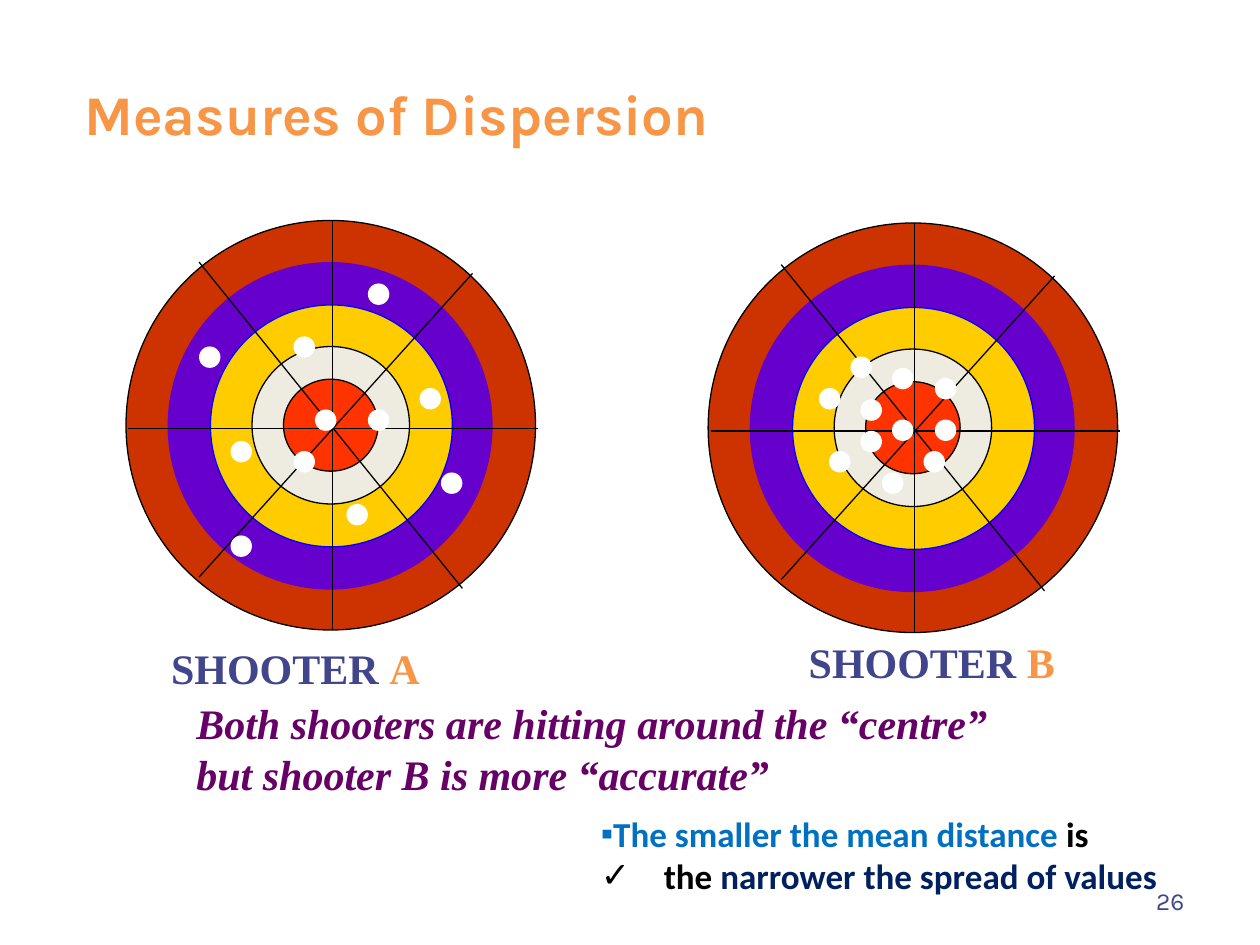
import dataclasses
import typing

import lxml.etree
import pptx
import pptx.dml.color
import pptx.enum.shapes
import pptx.enum.text
import pptx.oxml.ns
import pptx.util

Inches = pptx.util.Inches
Pt = pptx.util.Pt
ALIGN = pptx.enum.text.PP_ALIGN
ANCHOR = pptx.enum.text.MSO_ANCHOR
FIT = pptx.enum.text.MSO_AUTO_SIZE

HUES = {
    "rust": "CC3300", "violet": "6600CC", "gold": "FFCC00", "cream": "EEECE1",
    "red": "FF3300", "white": "FFFFFF", "black": "000000", "blue": "0000FF",
    "slate": "40458C", "orange": "F79646", "plum": "660066",
    "sky": "0070C0", "navy": "002060",
}
DOT = 0.17


@dataclasses.dataclass
class Ring:
    left: float
    top: float
    width: float
    height: float
    fill: str
    line: typing.Optional[str] = None


@dataclasses.dataclass
class Spoke:
    start: tuple
    end: tuple


@dataclasses.dataclass
class Target:
    left: float
    top: float
    shots: list


@dataclasses.dataclass
class Label:
    box: tuple
    lines: list  # one list of (text, hue) pairs per paragraph
    font: dict
    wrap: bool = True
    fit: typing.Any = FIT.SHAPE_TO_FIT_TEXT
    anchor: typing.Any = ANCHOR.TOP
    align: typing.Any = ALIGN.LEFT


# Rings and spokes are measured from the corner of their target.
RINGS = [
    Ring(0, 0, 3.25, 3.25, "rust", "black"),
    Ring(0.33, 0.33, 2.58, 2.6, "violet"),
    Ring(0.67, 0.67, 1.92, 1.92, "gold", "blue"),
    Ring(1, 1, 1.25, 1.25, "cream", "black"),
    Ring(1.25, 1.26, 0.75, 0.73, "red", "black"),
]
SPOKES = [
    Spoke((1.64, 0), (1.64, 3.25)),
    Spoke((0.02, 1.65), (3.27, 1.65)),
    Spoke((2.75, 0.42), (0.58, 2.83)),
    Spoke((0.58, 0.33), (2.67, 2.92)),
]
TARGETS = [
    Target(1, 1.75, [
        (1.83, 4.25), (3.5, 3.75), (2.75, 4), (1.58, 2.75), (1.83, 3.5), (2.33, 2.67),
        (3.33, 3.08), (2.92, 2.25), (2.33, 3.58), (2.92, 3.25), (2.5, 3.25)]),
    Target(5.62, 1.77, [
        (7.42, 3.33), (7.33, 3.58), (7, 3.75), (6.5, 3.08), (6.83, 3.42), (6.75, 2.83),
        (7.42, 3), (7.08, 2.92), (6.58, 3.58), (7.08, 3.33), (6.83, 3.17)]),
]

SERIF = {"name": "Times New Roman", "size": Pt(24), "bold": True}
LABELS = [
    Label((1.26, 5.05, 2.17, 0.5), [[("SHOOTER ", "slate"), ("A", "orange")]], SERIF, wrap=False),
    Label((6.32, 5, 2.17, 0.5), [[("SHOOTER ", "slate"), ("B", "orange")]], SERIF, wrap=False),
    Label((1.46, 5.49, 8.11, 0.91),
          [[("Both shooters are hitting around the “centre”", "plum")],
           [("but shooter B is more “accurate”", "plum")]], {**SERIF, "italic": True}),
    Label((0.57, 0.58, 5.44, 0.64), [[("Measures of Dispersion", "orange")]],
          {"name": "Karla", "size": Pt(32), "bold": True}, wrap=False),
    Label((7.17, 6.95, 2.33, 0.4), [[("26", "slate")]], {"name": "Karla", "size": Pt(14)},
          fit=FIT.NONE, anchor=ANCHOR.MIDDLE, align=ALIGN.RIGHT),
]
NOTE = Label((4.67, 6.4, 5, 0.77),
             [[("The smaller the mean distance", "sky"), (" is", "black")],
              [("the ", "black"), ("narrower the spread of values", "navy")]],
             {"name": "Calibri", "size": Pt(20), "bold": True})


def get_hue(name: str) -> pptx.dml.color.RGBColor:
    return pptx.dml.color.RGBColor.from_string(HUES[name])


def draw_ring(shapes, ring: Ring, left: float = 0, top: float = 0) -> None:
    disc = shapes.add_shape(
        pptx.enum.shapes.MSO_SHAPE.OVAL, Inches(left + ring.left), Inches(top + ring.top),
        Inches(ring.width), Inches(ring.height))
    disc.shadow.inherit = False
    disc.fill.solid()
    disc.fill.fore_color.rgb = get_hue(ring.fill)
    if ring.line:
        disc.line.color.rgb = get_hue(ring.line)
        disc.line.width = Pt(0.75)
    else:
        disc.line.fill.background()


def draw_spoke(shapes, spoke: Spoke, left: float, top: float) -> None:
    ends = [Inches(base + step) for point in (spoke.start, spoke.end)
            for base, step in zip((left, top), point)]
    line = shapes.add_connector(pptx.enum.shapes.MSO_CONNECTOR.STRAIGHT, *ends)
    line.line.color.rgb = get_hue("black")
    line.line.width = Pt(0.75)
    lxml.etree.SubElement(line._element.spPr, pptx.oxml.ns.qn("a:effectLst"))


def draw_target(slide, target: Target) -> None:
    group = slide.shapes.add_group_shape()
    for ring in RINGS:
        draw_ring(group.shapes, ring, target.left, target.top)
    for spoke in SPOKES:
        draw_spoke(group.shapes, spoke, target.left, target.top)
    for left, top in target.shots:
        draw_ring(slide.shapes, Ring(left, top, DOT, DOT, "white"))


def draw_label(slide, label: Label) -> pptx.text.text.TextFrame:
    frame = slide.shapes.add_textbox(*map(Inches, label.box)).text_frame
    form = {"word_wrap": label.wrap, "auto_size": label.fit, "vertical_anchor": label.anchor}
    for key, value in form.items():
        setattr(frame, key, value)
    for index, line in enumerate(label.lines):
        para = frame.add_paragraph() if index else frame.paragraphs[0]
        para.alignment = label.align
        for text, hue in line:
            run = para.add_run()
            run.text = text
            for key, value in label.font.items():
                setattr(run.font, key, value)
            run.font.color.rgb = get_hue(hue)
    return frame


def add_bullet(para, mark: str, indent: float = 0) -> None:
    """Give the paragraph a bullet that hangs by the indent."""
    props = para._p.get_or_add_pPr()
    props.set("marL", str(Inches(indent)))
    props.set("indent", str(-Inches(indent)))
    for tag, key, value in (("a:buFont", "typeface", "Arial"), ("a:buChar", "char", mark)):
        lxml.etree.SubElement(props, pptx.oxml.ns.qn(tag)).set(key, value)


def main() -> None:
    deck = pptx.Presentation()
    deck.slide_width, deck.slide_height = Inches(10), Inches(7.5)
    slide = deck.slides.add_slide(deck.slide_layouts[6])
    for target in TARGETS:
        draw_target(slide, target)
    for label in LABELS:
        draw_label(slide, label)
    first, second = draw_label(slide, NOTE).paragraphs
    add_bullet(first, "▪")
    add_bullet(second, "✓", 0.5)
    deck.save("out.pptx")


if __name__ == "__main__":
    main()
